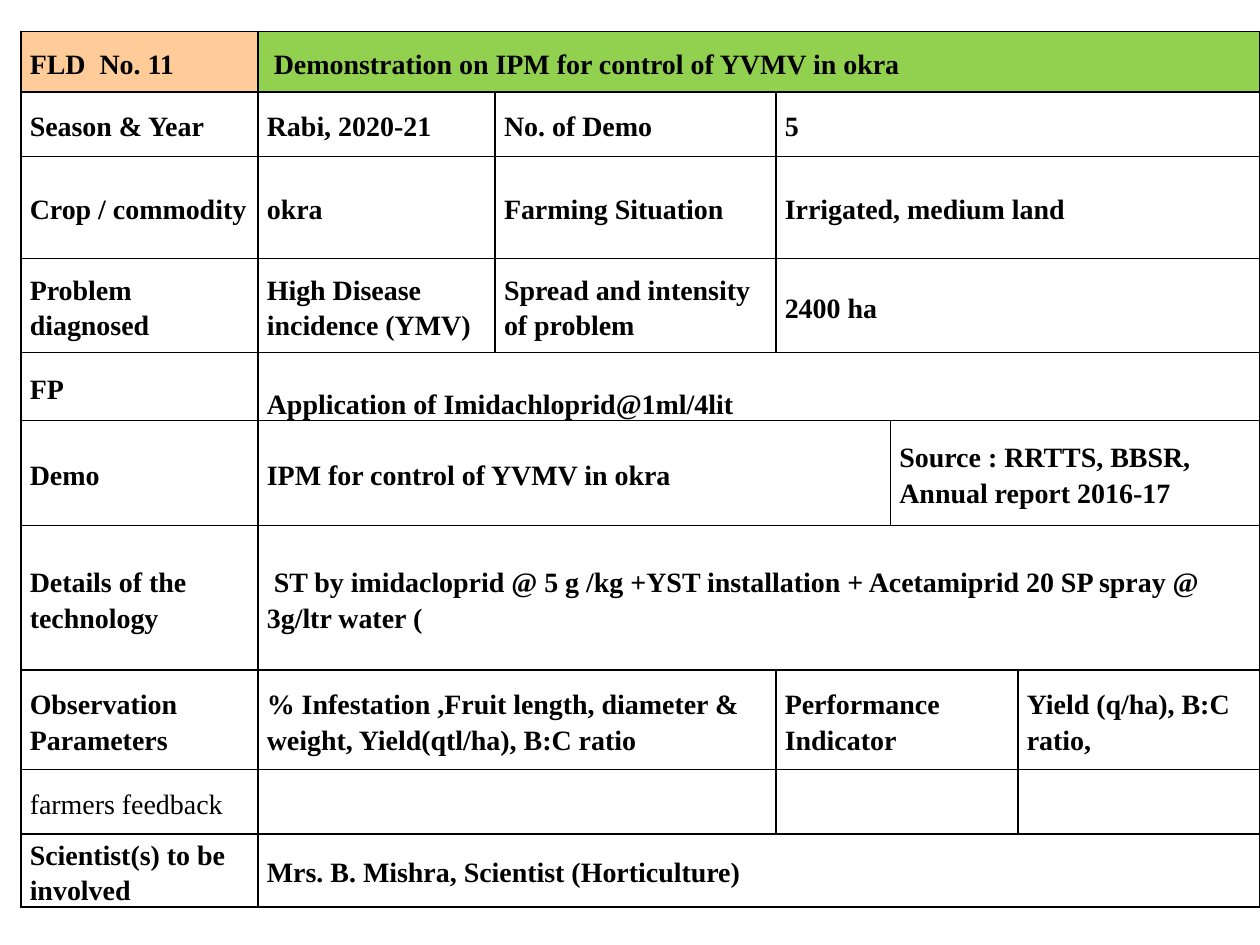
"""Build a one-slide demonstration sheet for okra pest management as a table."""
from dataclasses import dataclass
from typing import Optional

from lxml import etree
from pptx import Presentation
from pptx import util as u
from pptx.dml.color import RGBColor
from pptx.enum import text
from pptx.oxml import ns

BLACK = RGBColor(0x00, 0x00, 0x00)
ORANGE = RGBColor(0xFF, 0xCC, 0x99)
GREEN = RGBColor(0x92, 0xD0, 0x50)
FONT = "Times New Roman"
COLS = [4.78, 4.78, 5.66, 2.31, 2.57, 4.88]
MIDDLE = text.MSO_ANCHOR.MIDDLE


@dataclass
class Item:
    words: str
    span: int = 1
    fill: Optional[RGBColor] = None
    bold: bool = True
    anchor: text.MSO_ANCHOR = MIDDLE


@dataclass
class Row:
    height: float
    items: list[Item]


ROWS = [
    Row(1.22, [Item("FLD  No. 11", fill=ORANGE),
               Item(" Demonstration on IPM for control of YVMV in okra", 5, GREEN)]),
    Row(1.3, [Item("Season & Year"), Item("Rabi, 2020-21"),
              Item("No. of Demo"), Item("5", 3)]),
    Row(2.06, [Item("Crop / commodity"), Item("okra"),
               Item("Farming Situation"), Item("Irrigated, medium land", 3)]),
    Row(1.9, [Item("Problem diagnosed"), Item("High Disease incidence (YMV)"),
              Item("Spread and intensity of problem"), Item("2400 ha", 3)]),
    Row(1.37, [Item("FP"), Item("Application of Imidachloprid@1ml/4lit", 5,
                                anchor=text.MSO_ANCHOR.BOTTOM)]),
    Row(2.11, [Item("Demo"), Item("IPM for control of YVMV in okra", 3),
               Item("Source : RRTTS, BBSR, Annual report 2016-17", 2)]),
    Row(2.92, [Item("Details of the technology"),
               Item(" ST by imidacloprid @ 5 g /kg +YST installation + "
                    "Acetamiprid 20 SP spray @ 3g/ltr water (", 5)]),
    Row(2, [Item("Observation Parameters"),
            Item("% Infestation ,Fruit length, diameter & weight, "
                 "Yield(qtl/ha), B:C ratio", 2),
            Item("Performance Indicator", 2), Item("Yield (q/ha), B:C ratio,")]),
    Row(1.3, [Item("farmers feedback", bold=False), Item("", 2), Item("", 2), Item("")]),
    Row(1.45, [Item("Scientist(s) to be involved"),
               Item("Mrs. B. Mishra, Scientist (Horticulture)", 5)]),
]


def add_borders(cell) -> None:
    tc_pr = cell._tc.get_or_add_tcPr()
    for side in ("lnL", "lnR", "lnT", "lnB"):
        line = etree.SubElement(tc_pr, ns.qn(f"a:{side}"), w=str(u.Pt(1)))
        solid = etree.SubElement(line, ns.qn("a:solidFill"))
        etree.SubElement(solid, ns.qn("a:srgbClr"), val=str(BLACK))


def write_cell(cell, item: Item) -> None:
    cell.vertical_anchor = item.anchor
    cell.margin_left = cell.margin_right = u.Cm(0.18)
    cell.margin_top, cell.margin_bottom = u.Cm(0.03), 0
    if item.fill is not None:
        cell.fill.solid()
        cell.fill.fore_color.rgb = item.fill
    p = cell.text_frame.paragraphs[0]
    p.text = item.words
    p.line_spacing = 1.15
    p.font.size = u.Pt(16)
    for r in p.runs:
        r.font.name, r.font.size, r.font.bold = FONT, u.Pt(16), item.bold
        r.font.color.rgb = BLACK


def draw_table(s, rows: list[Row]) -> None:
    height = sum(row.height for row in rows)
    table = s.shapes.add_table(len(rows), len(COLS), u.Cm(0.42), u.Cm(0.63),
                               u.Cm(sum(COLS)), u.Cm(height)).table
    table.first_row = table.horz_banding = False
    for column, width in zip(table.columns, COLS):
        column.width = u.Cm(width)
    for cell in table.iter_cells():
        add_borders(cell)
        cell.fill.background()
    for i, row in enumerate(rows):
        table.rows[i].height = u.Cm(row.height)
        j = 0
        for item in row.items:
            cell = table.cell(i, j)
            if item.span > 1:
                cell.merge(table.cell(i, j + item.span - 1))
            write_cell(cell, item)
            j += item.span


def main() -> None:
    prs = Presentation()
    prs.slide_width, prs.slide_height = u.Cm(25.4), u.Cm(19.05)
    s = prs.slides.add_slide(prs.slide_layouts[6])
    draw_table(s, ROWS)
    prs.save("out.pptx")


if __name__ == "__main__":
    main()
